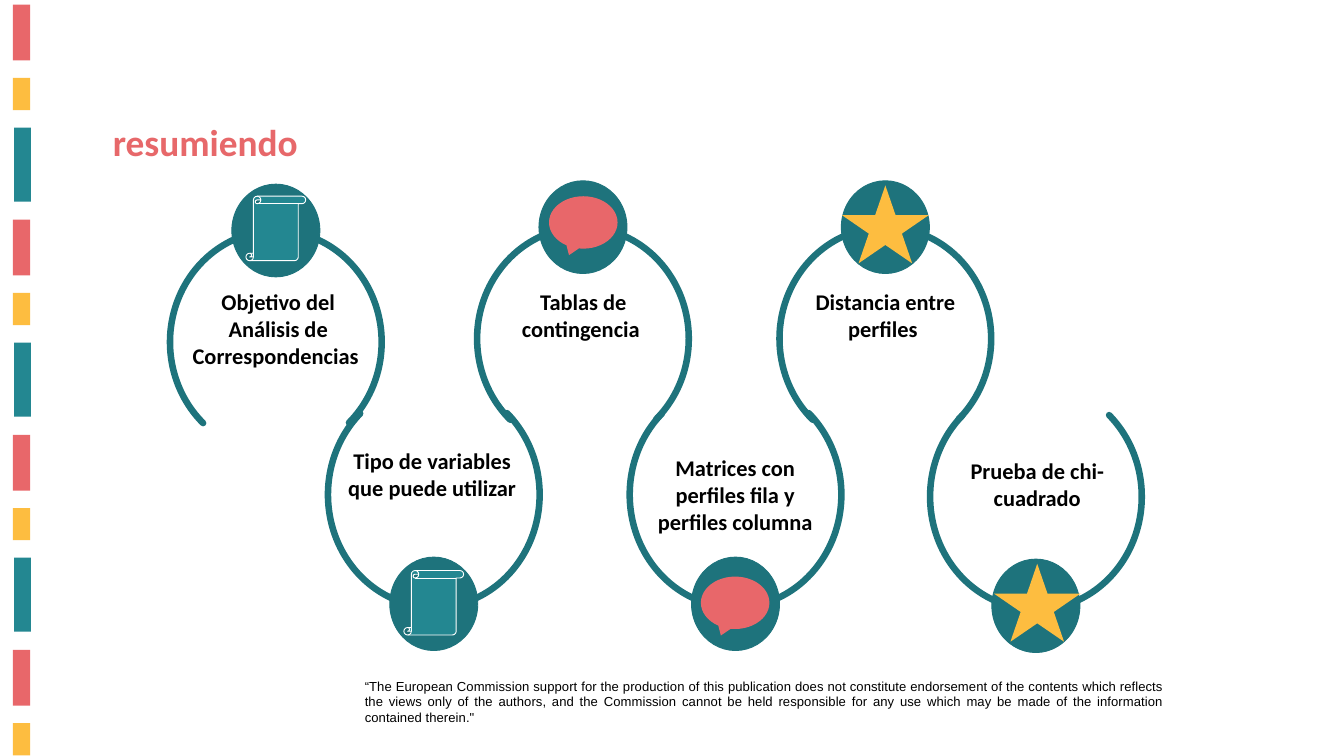
from dataclasses import dataclass

from pptx import Presentation
from pptx.dml.color import RGBColor
from pptx.enum.shapes import MSO_SHAPE as Shape
from pptx.enum.text import MSO_ANCHOR as Anchor, MSO_AUTO_SIZE as AutoSize, PP_ALIGN as Align
from pptx.oxml.ns import qn
from pptx.util import Emu, Pt

EMU_PER_PX = 9144
PAGE_WIDTH, PAGE_HEIGHT = 2000, 1125
STRIPE_PERIOD = 320
ARC_WIDTH = 315
DISC_WIDTH = 131
DISC_INSET = 92
DARK_TEAL, TEAL, CORAL, YELLOW = "1E737C", "238791", "E8676A", "FDBD40"
TITLE_CORAL, BLACK, WHITE = "E7686A", "000000", "FFFFFF"


@dataclass(frozen=True)
class Box:
    left: int
    top: int
    width: int
    height: int

    def emu(self) -> tuple:
        return tuple(px(n) for n in (self.left, self.top, self.width, self.height))


@dataclass(frozen=True)
class Stripe:
    box: Box
    fill: str


@dataclass(frozen=True)
class Row:
    arc_height: int
    disc_height: int
    disc_offset: int
    rotation: int


@dataclass(frozen=True)
class Icon:
    preset: Shape
    width: int
    height: int
    fill: str
    outline: str = ""


@dataclass(frozen=True)
class Stage:
    label: str
    label_box: Box
    row: Row
    left: int
    top: int
    icon: Icon
    icon_left: int
    icon_top: int


UPPER = Row(332, 138, -69, 0)
LOWER = Row(336, 139, 261, 180)
SCROLL = Icon(Shape.VERTICAL_SCROLL, 89, 96, TEAL, WHITE)
BUBBLE = Icon(Shape.OVAL_CALLOUT, 102, 78, CORAL)
STAR = Icon(Shape.STAR_5_POINT, 129, 116, YELLOW)

STRIPES = [
    Stripe(Box(19, 7, 26, 83), CORAL),
    Stripe(Box(19, 116, 26, 48), YELLOW),
    Stripe(Box(21, 190, 25, 110), TEAL),
]

STAGES = [
    Stage("Objetivo del Análisis de Correspondencias ", Box(269, 424, 290, 131),
          UPPER, 253, 343, SCROLL, 366, 292),
    Stage("Tipo de variables que puede utilizar", Box(489, 661, 308, 131),
          LOWER, 488, 568, SCROLL, 601, 849),
    Stage("Tablas de contingencia ", Box(714, 424, 308, 91),
          UPPER, 710, 338, BUBBLE, 817, 292),
    Stage("Matrices con perfiles fila y perfiles columna", Box(949, 671, 290, 131),
          LOWER, 937, 568, BUBBLE, 1043, 858),
    Stage("Distancia entre perfiles ", Box(1180, 424, 275, 131),
          UPPER, 1160, 338, STAR, 1253, 276),
    Stage("Prueba de chi- cuadrado", Box(1389, 675, 309, 91),
          LOWER, 1384, 571, STAR, 1479, 839),
]

DISCLAIMER = (
    "“The European Commission support for the production of this publication does not "
    "constitute endorsement of the contents which reflects the views only of the authors, "
    "and the Commission cannot be held responsible for any use which may be made of the "
    "information contained therein.\""
)


def px(length: int) -> Emu:
    return Emu(length * EMU_PER_PX)


def color(value: str) -> RGBColor:
    return RGBColor.from_string(value)


def draw_shape(shapes, preset: Shape, box: Box, fill: str = "", outline: str = "",
               weight: int = 1, rotation: int = 0):
    shape = shapes.add_shape(preset, *box.emu())
    shape.shadow.inherit = False
    shape.rotation = rotation
    if fill:
        shape.fill.solid()
        shape.fill.fore_color.rgb = color(fill)
    else:
        shape.fill.background()
    if outline:
        shape.line.color.rgb = color(outline)
        shape.line.width = Pt(weight)
    else:
        shape.line.fill.background()
    return shape


def format_text(frame, text: str, size: int, font: str, fill: str,
                align: Align, bold: bool):
    frame.text = text
    frame.word_wrap = True
    frame.auto_size = AutoSize.SHAPE_TO_FIT_TEXT
    frame.vertical_anchor = Anchor.TOP
    para = frame.paragraphs[0]
    para.alignment = align
    span = para.runs[0]
    span.font.size = Pt(size)
    span.font.name = font
    span.font.bold = bold
    span.font.color.rgb = color(fill)
    return span


def draw_text(page, box: Box, text: str, size: int, font: str, align: Align, bold: bool):
    frame = page.shapes.add_textbox(*box.emu()).text_frame
    return format_text(frame, text, size, font, BLACK, align, bold)


def draw_title(page, box: Box, text: str) -> None:
    title = page.shapes.title
    title.left, title.top, title.width, title.height = box.emu()
    format_text(title.text_frame, text, 40, "Calibri", TITLE_CORAL, Align.LEFT, True)


def draw_stripes(page) -> None:
    for offset in range(0, PAGE_HEIGHT, STRIPE_PERIOD):
        for stripe in STRIPES:
            top = stripe.box.top + offset
            if top < PAGE_HEIGHT:
                box = Box(stripe.box.left, top, stripe.box.width, stripe.box.height)
                draw_shape(page.shapes, Shape.RECTANGLE, box, stripe.fill)


def draw_ring(page, stage: Stage) -> None:
    row = stage.row
    group = page.shapes.add_group_shape()
    arc_box = Box(stage.left, stage.top, ARC_WIDTH, row.arc_height)
    arc = draw_shape(group.shapes, Shape.ARC, arc_box, outline=DARK_TEAL, weight=7,
                     rotation=row.rotation)
    arc.adjustments[0] = 79.14
    arc.adjustments[1] = 28.68
    arc._element.spPr.find(qn("a:ln")).set("cap", "rnd")
    disc_box = Box(stage.left + DISC_INSET, stage.top + row.disc_offset,
                   DISC_WIDTH, row.disc_height)
    draw_shape(group.shapes, Shape.OVAL, disc_box, DARK_TEAL, DARK_TEAL)


def draw_stage(page, stage: Stage) -> None:
    draw_ring(page, stage)
    icon = stage.icon
    icon_box = Box(stage.icon_left, stage.icon_top, icon.width, icon.height)
    draw_shape(page.shapes, icon.preset, icon_box, icon.fill, icon.outline)
    draw_text(page, stage.label_box, stage.label, 24, "Calibri", Align.CENTER, True)


def main() -> None:
    deck = Presentation()
    deck.slide_width, deck.slide_height = px(PAGE_WIDTH), px(PAGE_HEIGHT)
    page = deck.slides.add_slide(deck.slide_layouts.get_by_name("Title Only"))
    draw_stripes(page)
    draw_title(page, Box(158, 172, 658, 77), "resumiendo")
    for stage in STAGES:
        draw_stage(page, stage)
    span = draw_text(page, Box(533, 1004, 1209, 81), DISCLAIMER, 14, "Arial",
                     Align.JUSTIFY, False)
    span.font._element.set("spc", "5")
    deck.save("out.pptx")


if __name__ == "__main__":
    main()
